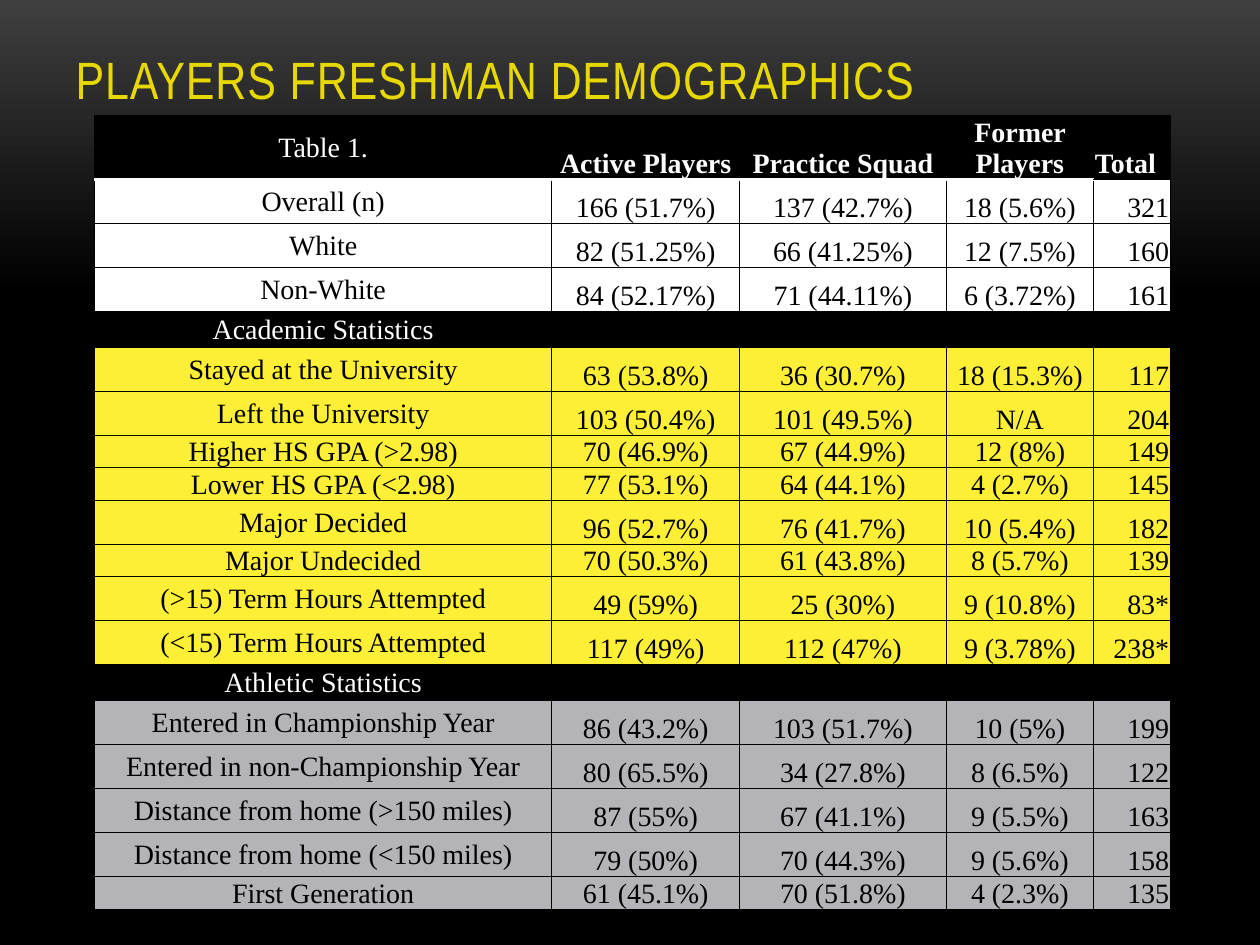
"""Build the slide that tabulates player demographics at freshman entry."""
from dataclasses import dataclass

from lxml.etree import SubElement
from pptx import Presentation
from pptx.dml.color import RGBColor
from pptx.enum.text import MSO_ANCHOR, MSO_AUTO_SIZE, PP_ALIGN
from pptx.oxml.ns import qn
from pptx.slide import Slide
from pptx.table import _Cell
from pptx.text.text import TextFrame
from pptx.util import Inches, Pt


@dataclass(frozen=True)
class Theme:
    title_font: str = "Arial Narrow"
    table_font: str = "Times New Roman"
    title_size: float = 30
    table_size: float = 16
    title_spacing: float = 0.5
    rule: float = 0.75
    header_rule: float = 2
    title: str = "E8D802"
    glow: str = "3F3F3F"
    black: str = "000000"
    white: str = "FFFFFF"
    yellow: str = "FDEF35"
    grey: str = "B4B4B8"


@dataclass(frozen=True)
class Record:
    values: tuple[str, ...]
    fill: str
    color: str = "000000"
    height: float = 0.35
    header: bool = False


THEME = Theme()
COLUMN_WIDTHS = (3.63, 1.49, 1.64, 1.17, 0.61)
LOW = 0.25


def group(fill: str, *rows: tuple[str, ...], low: tuple[int, ...] = ()) -> list[Record]:
    """Give rows one fill, with the listed rows set to the low height."""
    return [Record(values, fill, height=LOW if i in low else 0.35)
            for i, values in enumerate(rows)]


def section(heading: str) -> Record:
    """Make a black row that names the group under it."""
    return Record((heading, "", "", "", ""), THEME.black, THEME.white, LOW)


RECORDS = [
    Record(("Table 1.", "Active Players", "Practice Squad", "Former Players", "Total"),
           THEME.black, THEME.white, 0.49, True),
    *group(
        THEME.white,
        ("Overall (n)", "166 (51.7%)", "137 (42.7%)", "18 (5.6%)", "321"),
        ("White", "82 (51.25%)", "66 (41.25%)", "12 (7.5%)", "160"),
        ("Non-White", "84 (52.17%)", "71 (44.11%)", "6 (3.72%)", "161"),
    ),
    section("Academic Statistics"),
    *group(
        THEME.yellow,
        ("Stayed at the University", "63 (53.8%)", "36 (30.7%)", "18 (15.3%)", "117"),
        ("Left the University", "103 (50.4%)", "101 (49.5%)", "N/A", "204"),
        ("Higher HS GPA (>2.98)", "70 (46.9%)", "67 (44.9%)", "12 (8%)", "149"),
        ("Lower HS GPA (<2.98)", "77 (53.1%)", "64 (44.1%)", "4 (2.7%)", "145"),
        ("Major Decided", "96 (52.7%)", "76 (41.7%)", "10 (5.4%)", "182"),
        ("Major Undecided", "70 (50.3%)", "61 (43.8%)", "8 (5.7%)", "139"),
        ("(>15) Term Hours Attempted", "49 (59%)", "25 (30%)", "9 (10.8%)", "83*"),
        ("(<15) Term Hours Attempted", "117 (49%)", "112 (47%)", "9 (3.78%)", "238*"),
        low=(2, 3, 5),
    ),
    section("Athletic Statistics"),
    *group(
        THEME.grey,
        ("Entered in Championship Year", "86 (43.2%)", "103 (51.7%)", "10 (5%)", "199"),
        ("Entered in non-Championship Year", "80 (65.5%)", "34 (27.8%)", "8 (6.5%)", "122"),
        ("Distance from home (>150 miles)", "87 (55%)", "67 (41.1%)", "9 (5.5%)", "163"),
        ("Distance from home (<150 miles)", "79 (50%)", "70 (44.3%)", "9 (5.6%)", "158"),
        ("First Generation", "61 (45.1%)", "70 (51.8%)", "4 (2.3%)", "135"),
        low=(4,),
    ),
]


def write(frame: TextFrame, text: str, *, font: str, size: float, color: str,
          bold: bool = False, align: PP_ALIGN = PP_ALIGN.LEFT, spacing: float = 0) -> None:
    """Put formatted text in the first paragraph of a frame."""
    paragraph = frame.paragraphs[0]
    paragraph.alignment = align
    if not text:
        SubElement(paragraph._p, qn("a:endParaRPr"), sz=str(int(size * 100)))
        return
    run = paragraph.add_run()
    run.text = text
    run.font.name = font
    run.font.size = Pt(size)
    run.font.bold = bold
    run.font.color.rgb = RGBColor.from_string(color)
    if spacing:
        run.font._element.set("spc", str(int(spacing * 100)))


def add_border(cell: _Cell, side: str, color: str, width: float) -> None:
    """Draw one side of a cell's border."""
    line = SubElement(cell._tc.get_or_add_tcPr(), qn(f"a:ln{side}"), w=str(Pt(width)))
    SubElement(SubElement(line, qn("a:solidFill")), qn("a:srgbClr"), val=color)


def fill_cell(cell: _Cell, record: Record, column: int, under_header: bool) -> None:
    """Write and format one cell of a record."""
    is_label, is_total = column == 0, column == len(COLUMN_WIDTHS) - 1
    for side in "LRTB":
        at_header_edge = (side == "B" and record.header) or (side == "T" and under_header)
        if at_header_edge and not is_total:
            add_border(cell, side, THEME.white, THEME.header_rule)
        else:
            add_border(cell, side, THEME.black, THEME.rule)
    cell.fill.solid()
    cell.fill.fore_color.rgb = RGBColor.from_string(record.fill)
    cell.margin_left = cell.margin_right = cell.margin_top = Inches(0.01)
    cell.margin_bottom = 0
    cell.vertical_anchor = MSO_ANCHOR.MIDDLE if is_label else MSO_ANCHOR.BOTTOM
    total_align = PP_ALIGN.LEFT if record.header else PP_ALIGN.RIGHT
    write(cell.text_frame, record.values[column], font=THEME.table_font,
          size=THEME.table_size, color=record.color,
          bold=record.header and not is_label,
          align=total_align if is_total else PP_ALIGN.CENTER)


def add_demographics(slide: Slide, records: list[Record]) -> None:
    """Add the table of demographics."""
    table = slide.shapes.add_table(
        len(records), len(COLUMN_WIDTHS), Inches(0.75), Inches(0.92),
        Inches(sum(COLUMN_WIDTHS)), Inches(sum(r.height for r in records))).table
    table.first_row = table.horz_banding = False
    for column, width in zip(table.columns, COLUMN_WIDTHS):
        column.width = Inches(width)
    for i, record in enumerate(records):
        table.rows[i].height = Inches(record.height)
        for j in range(len(COLUMN_WIDTHS)):
            fill_cell(table.cell(i, j), record, j, under_header=i == 1)


def paint_background(slide: Slide) -> None:
    """Fade the background from a grey top edge to black."""
    fill = slide.background.fill
    fill.gradient()
    fill.gradient_angle = 270
    for stop, position, color in zip(fill.gradient_stops, (0, 0.31), (THEME.glow, THEME.black)):
        stop.position = position
        stop.color.rgb = RGBColor.from_string(color)


def add_title(slide: Slide, text: str) -> None:
    """Place and write the slide title."""
    title = slide.shapes.title
    title.left, title.top = Inches(0.5), Inches(-0.33)
    title.width, title.height = Inches(8.67), Inches(1.25)
    frame = title.text_frame
    frame.word_wrap = True
    frame.auto_size = MSO_AUTO_SIZE.NONE
    frame.vertical_anchor = MSO_ANCHOR.BOTTOM
    write(frame, text, font=THEME.title_font, size=THEME.title_size,
          color=THEME.title, spacing=THEME.title_spacing)


def main() -> None:
    """Build and save the presentation."""
    deck = Presentation()
    deck.slide_width, deck.slide_height = Inches(10), Inches(7.5)
    slide = deck.slides.add_slide(deck.slide_layouts[5])
    paint_background(slide)
    add_title(slide, "PLAYERS FRESHMAN DEMOGRAPHICS")
    add_demographics(slide, RECORDS)
    deck.save("out.pptx")


if __name__ == "__main__":
    main()
